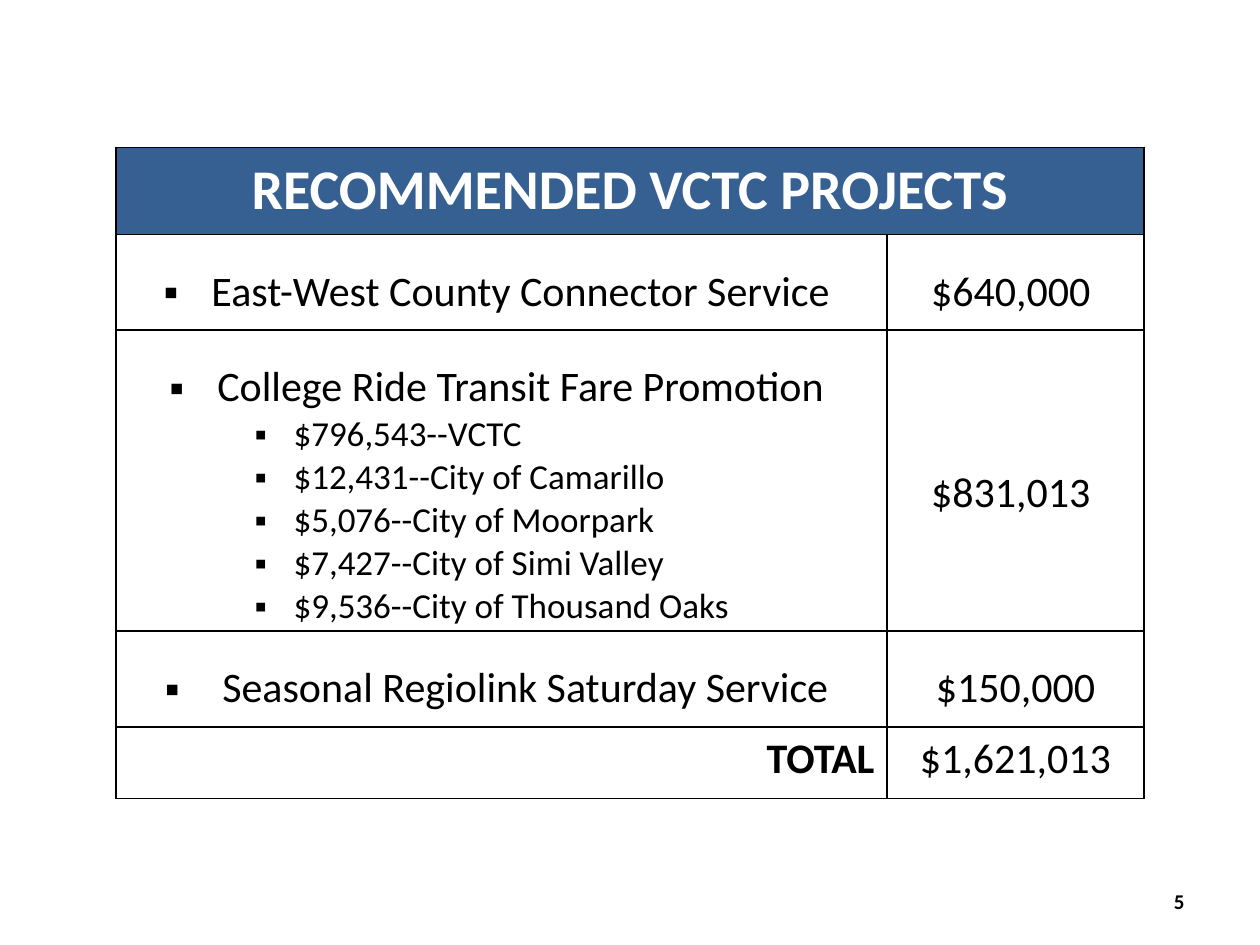
from dataclasses import dataclass

from lxml.etree import SubElement
from pptx import Presentation
from pptx.dml.color import RGBColor
from pptx.enum.text import MSO_ANCHOR as Anchor, PP_ALIGN as Align
from pptx.oxml.ns import qn
from pptx.util import Inches, Pt


@dataclass(frozen=True)
class Theme:
    font: str = "Calibri"
    header_fill: RGBColor = RGBColor(0x37, 0x60, 0x92)
    white: RGBColor = RGBColor(0xFF, 0xFF, 0xFF)
    black: RGBColor = RGBColor(0, 0, 0)
    border: str = "000000"
    header: int = 32
    body: int = 24
    detail: int = 20
    page: int = 12


THEME = Theme()
HEADING = "RECOMMENDED VCTC PROJECTS"
PAGE_NUMBER = "5"
# project, shares by agency, amount, anchor of the amount
PROJECTS = [
    ("East-West County Connector Service ", [], "$640,000 ", Anchor.TOP),
    ("College Ride Transit Fare Promotion ",
     ["$796,543--VCTC", "$12,431--City of Camarillo", "$5,076--City of Moorpark",
      "$7,427--City of Simi Valley", "$9,536--City of Thousand Oaks"],
     "$831,013 ", Anchor.MIDDLE),
    (" Seasonal Regiolink Saturday Service ", [], "$150,000", Anchor.TOP),
]
TOTAL = ("TOTAL", "$1,621,013")

WIDTH, HEIGHT = 10, 7.5
TABLE_LEFT, TABLE_TOP = 0.92, 1.17
COLUMNS = [6.12, 2.04]
HEADER_ROW, PROJECT_ROW, DETAIL_LINE, TOTAL_ROW = 0.69, 0.76, 0.326, 0.57


def add_bullet(para, left, hanging):
    props = para._p.get_or_add_pPr()
    props.set("marL", str(Inches(left)))
    props.set("indent", str(-Inches(hanging)))
    SubElement(props, qn("a:buFont"), typeface="Arial")
    SubElement(props, qn("a:buChar"), char="▪")


def write(frame, text, size=THEME.body, align=Align.CENTER, bold=False,
          color=THEME.black, spacing=None, bullet=None, level=0):
    """Fill the frame's empty first paragraph, or add one after it."""
    para = frame.paragraphs[-1]
    if para.runs:
        para = frame.add_paragraph()
    para.alignment, para.level = align, level
    if spacing:
        para.line_spacing = spacing
    if bullet:
        add_bullet(para, *bullet)
    span = para.add_run()
    span.text = text
    span.font.name, span.font.size = THEME.font, Pt(size)
    span.font.bold, span.font.color.rgb = bold, color


def style_cell(cell):
    props = cell._tc.get_or_add_tcPr()
    for side in ("lnL", "lnR", "lnT", "lnB"):
        line = SubElement(props, qn(f"a:{side}"), w=str(Pt(1)))
        fill = SubElement(line, qn("a:solidFill"))
        SubElement(fill, qn("a:srgbClr"), val=THEME.border)
    cell.fill.background()


def add_project_table(page):
    rows = [HEADER_ROW,
            *(PROJECT_ROW + DETAIL_LINE * len(shares) for _, shares, _, _ in PROJECTS),
            TOTAL_ROW]
    table = page.shapes.add_table(
        len(rows), len(COLUMNS), Inches(TABLE_LEFT), Inches(TABLE_TOP),
        Inches(sum(COLUMNS)), Inches(sum(rows))).table
    table.first_row = table.horz_banding = False
    for column, width in zip(table.columns, COLUMNS):
        column.width = Inches(width)
    for row, height in zip(table.rows, rows):
        row.height = Inches(height)
    for cell in table.iter_cells():
        style_cell(cell)

    header = table.cell(0, 0)
    header.merge(table.cell(0, 1))
    header.fill.solid()
    header.fill.fore_color.rgb = THEME.header_fill
    header.vertical_anchor = Anchor.MIDDLE
    write(header.text_frame, HEADING, THEME.header, bold=True, color=THEME.white)

    for index, (project, shares, amount, anchor) in enumerate(PROJECTS, start=1):
        name_cell, amount_cell = table.cell(index, 0), table.cell(index, 1)
        write(name_cell.text_frame, project, spacing=1.5, bullet=(0.38, 0.38))
        for share in shares:
            write(name_cell.text_frame, share, THEME.detail, Align.LEFT,
                  bullet=(1.31, 0.31), level=2)
        amount_cell.vertical_anchor = anchor
        write(amount_cell.text_frame, amount, spacing=1.5)

    label, total = TOTAL
    last = len(rows) - 1
    write(table.cell(last, 0).text_frame, label, align=Align.RIGHT, bold=True)
    write(table.cell(last, 1).text_frame, total)


def add_page_number(page):
    box = page.shapes.add_textbox(Inches(7.17), Inches(6.95), Inches(2.33), Inches(0.4))
    frame = box.text_frame
    frame.word_wrap = True
    frame.vertical_anchor = Anchor.MIDDLE
    write(frame, PAGE_NUMBER, THEME.page, Align.RIGHT, bold=True)


def main():
    deck = Presentation()
    deck.slide_width, deck.slide_height = Inches(WIDTH), Inches(HEIGHT)
    page = deck.slides.add_slide(deck.slide_layouts[6])
    add_page_number(page)
    add_project_table(page)
    deck.save("out.pptx")


if __name__ == "__main__":
    main()
